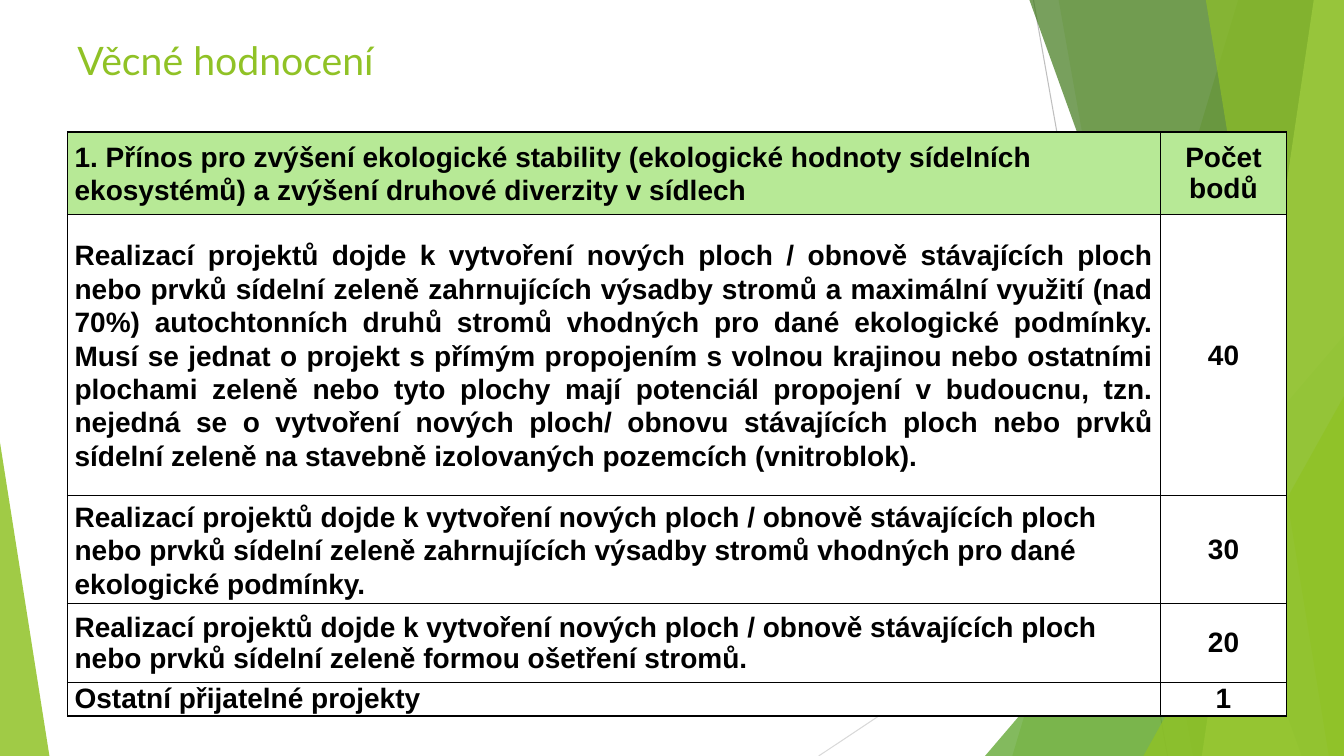
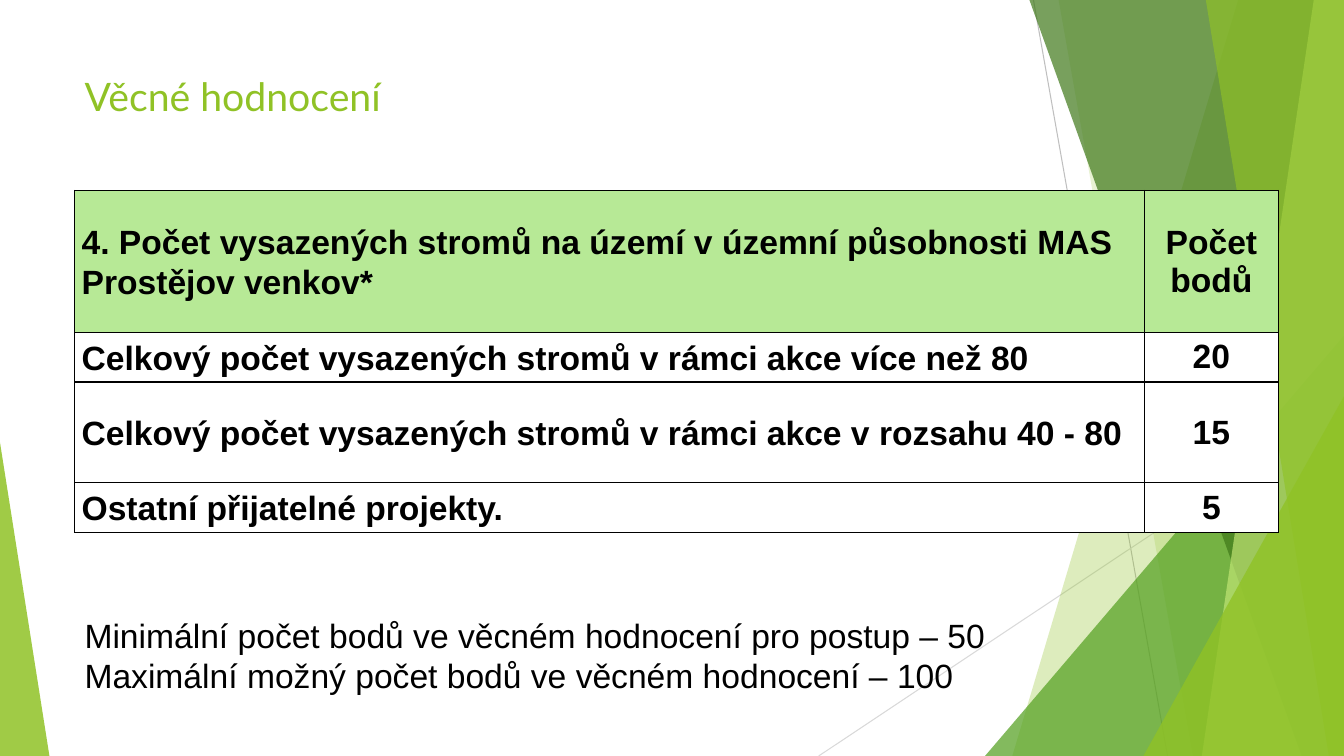
from dataclasses import dataclass

from lxml import etree
from pptx import Presentation
from pptx.dml.color import RGBColor
from pptx.enum.shapes import MSO_CONNECTOR, MSO_SHAPE
from pptx.enum.text import MSO_ANCHOR, PP_ALIGN
from pptx.oxml.ns import qn
from pptx.slide import Slide
from pptx.table import _Cell as Cell
from pptx.text.text import TextFrame, _Paragraph as Paragraph
from pptx.util import Inches, Pt

WIDTH, HEIGHT = 13.33, 7.5
COLORS = {
    "lime": "90C226", "green": "54A021", "forest": "3F7819", "pale": "C0E474",
    "ray_dark": "BFBFBF", "ray_light": "D9D9D9",
    "header": "B7E996", "white": "FFFFFF", "black": "000000",
}
BODY_FONT, TITLE_FONT = "Arial", "Lato"
LOOSE = 1.07
LEFT, CENTER, JUSTIFY = PP_ALIGN.LEFT, PP_ALIGN.CENTER, PP_ALIGN.JUSTIFY


@dataclass(frozen=True)
class Ray:
    start: tuple[float, float]
    end: tuple[float, float]
    color: str


@dataclass(frozen=True)
class Band:
    """A strip from a slanted edge to the right side of the slide."""
    top_x: float
    bottom_x: float
    color: str
    opacity: int


@dataclass(frozen=True)
class Wedge:
    """A right triangle standing on the bottom of the slide."""
    left: float
    top: float
    width: float
    apex: float
    color: str
    opacity: int


@dataclass(frozen=True)
class Criterion:
    text: str
    points: str
    height: float
    align: PP_ALIGN = LEFT
    spacing: float = LOOSE


@dataclass(frozen=True)
class ScoreTable:
    left: float
    top: float
    columns: tuple[float, float]
    size: int
    criteria: tuple[Criterion, ...]


RAYS = (
    Ray((10.25, 0), (11.58, HEIGHT), "ray_dark"),
    Ray((WIDTH, 4.03), (8.12, HEIGHT), "ray_light"),
)
FACETS = (
    Band(12.28, 10.04, "lime", 30),
    Band(10.5, 11.83, "lime", 20),
    Wedge(9.77, 3.33, 3.56, 1, "green", 72),
    Band(10.21, 12.91, "forest", 70),
    Band(13.03, 11.92, "pale", 70),
    Band(11.96, 13.18, "lime", 65),
    Wedge(11.34, 3.93, 1.99, 1, "lime", 80),
    Wedge(0, 4.39, 0.49, 0, "lime", 85),
)

STABILITY = ScoreTable(0.67, 1.31, (10.84, 1.25), 20, (
    Criterion("1. Přínos pro zvýšení ekologické stability (ekologické hodnoty sídelních "
              "ekosystémů) a zvýšení druhové diverzity v sídlech", "Počet bodů", 0.82),
    Criterion("Realizací projektů dojde k vytvoření nových ploch / obnově stávajících ploch "
              "nebo prvků sídelní zeleně zahrnujících výsadby stromů a maximální využití "
              "(nad 70%) autochtonních druhů stromů vhodných pro dané ekologické podmínky. "
              "Musí se jednat o projekt s přímým propojením s volnou krajinou nebo ostatními "
              "plochami zeleně nebo tyto plochy mají potenciál propojení v budoucnu, tzn. "
              "nejedná se o vytvoření nových ploch/ obnovu stávajících ploch nebo prvků "
              "sídelní zeleně na stavebně izolovaných pozemcích (vnitroblok).",
              "40", 2.79, JUSTIFY),
    Criterion("Realizací projektů dojde k vytvoření nových ploch / obnově stávajících ploch "
              "nebo prvků sídelní zeleně zahrnujících výsadby stromů vhodných pro dané "
              "ekologické podmínky.", "30", 0.96),
    Criterion("Realizací projektů dojde k vytvoření nových ploch / obnově stávajících ploch "
              "nebo prvků sídelní zeleně formou ošetření stromů.", "20", 0.78, spacing=1.0),
    Criterion("Ostatní přijatelné projekty", "1", 0.3, spacing=1.0),
))
PLANTING = ScoreTable(0.74, 1.89, (10.61, 1.33), 24, (
    Criterion("4. Počet vysazených stromů na území v územní působnosti MAS "
              "Prostějov venkov*", "Počet bodů", 1.41),
    Criterion("Celkový počet vysazených stromů v rámci akce více než 80", "20", 0.49),
    Criterion("Celkový počet vysazených stromů v rámci akce v rozsahu 40 - 80", "15", 1),
    Criterion("Ostatní přijatelné projekty.", "5", 0.49),
))
THRESHOLDS = (
    "Minimální počet bodů ve věcném hodnocení pro postup – 50",
    "Maximální možný počet bodů ve věcném hodnocení – 100",
)


def rgb(name: str) -> RGBColor:
    return RGBColor.from_string(COLORS[name])


def add_run(paragraph: Paragraph, text: str, size: int, font: str = BODY_FONT,
            color: str = "black", bold: bool = False) -> None:
    run = paragraph.add_run()
    run.text = text
    run.font.size = Pt(size)
    run.font.name = font
    run.font.bold = bold
    run.font.color.rgb = rgb(color)


def add_ray(slide: Slide, ray: Ray) -> None:
    (x1, y1), (x2, y2) = ray.start, ray.end
    line = slide.shapes.add_connector(MSO_CONNECTOR.STRAIGHT, Inches(x1), Inches(y1),
                                      Inches(x2), Inches(y2))
    line.line.color.rgb = rgb(ray.color)
    line.line.width = Pt(0.75)
    etree.SubElement(line._element.spPr, qn("a:effectLst"))


def add_facet(slide: Slide, facet: Band | Wedge) -> None:
    if isinstance(facet, Band):
        outline = slide.shapes.build_freeform(Inches(facet.top_x), 0)
        outline.add_line_segments([(Inches(x), Inches(y)) for x, y in (
            (WIDTH, 0), (WIDTH, HEIGHT), (facet.bottom_x, HEIGHT))])
        shape = outline.convert_to_shape()
    else:
        shape = slide.shapes.add_shape(
            MSO_SHAPE.ISOSCELES_TRIANGLE, Inches(facet.left), Inches(facet.top),
            Inches(facet.width), Inches(HEIGHT - facet.top))
        shape.adjustments[0] = facet.apex
    shape.shadow.inherit = False
    shape.line.fill.background()
    shape.fill.solid()
    shape.fill.fore_color.rgb = rgb(facet.color)
    tint = shape._element.spPr.find(qn("a:solidFill"))[0]
    etree.SubElement(tint, qn("a:alpha"), val=str(facet.opacity * 1000))


def add_text_frame(slide: Slide, left: float, top: float, width: float,
                   height: float) -> TextFrame:
    frame = slide.shapes.add_textbox(Inches(left), Inches(top), Inches(width),
                                     Inches(height)).text_frame
    frame.word_wrap = True
    return frame


def add_themed_slide(deck: Presentation, title_left: float, title_top: float) -> Slide:
    """Add a blank slide with the faceted backdrop and the common title."""
    slide = deck.slides.add_slide(deck.slide_layouts[6])
    for ray in RAYS:
        add_ray(slide, ray)
    for facet in FACETS:
        add_facet(slide, facet)
    title = add_text_frame(slide, title_left, title_top, 9.4, 0.59)
    add_run(title.paragraphs[0], "Věcné hodnocení", 28, TITLE_FONT, "lime")
    return slide


def style_cell(cell: Cell, fill: str) -> None:
    cell.vertical_anchor = MSO_ANCHOR.MIDDLE
    cell.margin_left = cell.margin_right = Inches(0.07)
    cell.margin_top = cell.margin_bottom = 0
    properties = cell._tc.get_or_add_tcPr()
    for side in ("lnL", "lnR", "lnT", "lnB"):
        border = etree.SubElement(properties, qn(f"a:{side}"), w=str(Pt(1)))
        solid = etree.SubElement(border, qn("a:solidFill"))
        etree.SubElement(solid, qn("a:srgbClr"), val=COLORS["black"])
    cell.fill.solid()
    cell.fill.fore_color.rgb = rgb(fill)


def add_score_table(slide: Slide, scores: ScoreTable) -> None:
    table = slide.shapes.add_table(
        len(scores.criteria), len(scores.columns), Inches(scores.left), Inches(scores.top),
        Inches(sum(scores.columns)), Inches(sum(c.height for c in scores.criteria))).table
    table.first_row = table.horz_banding = False
    for column, width in zip(table.columns, scores.columns):
        column.width = Inches(width)
    for index, criterion in enumerate(scores.criteria):
        table.rows[index].height = Inches(criterion.height)
        contents = ((criterion.text, criterion.align, criterion.spacing),
                    (criterion.points, CENTER, 1.0))
        for cell, (text, align, spacing) in zip(table.rows[index].cells, contents):
            style_cell(cell, "white" if index else "header")
            paragraph = cell.text_frame.paragraphs[0]
            paragraph.alignment = align
            paragraph.line_spacing = spacing
            add_run(paragraph, text, scores.size, bold=True)


def add_thresholds(slide: Slide) -> None:
    frame = add_text_frame(slide, 0.74, 6.05, 11.94, 1.21)
    for index, threshold in enumerate(THRESHOLDS):
        paragraph = frame.add_paragraph() if index else frame.paragraphs[0]
        add_run(paragraph, threshold, 24)


def main() -> None:
    deck = Presentation()
    deck.slide_width, deck.slide_height = Inches(WIDTH), Inches(HEIGHT)
    add_score_table(add_themed_slide(deck, 0.67, 0.31), STABILITY)
    planting_slide = add_themed_slide(deck, 0.74, 0.67)
    add_score_table(planting_slide, PLANTING)
    add_thresholds(planting_slide)
    deck.save("out.pptx")


if __name__ == "__main__":
    main()
